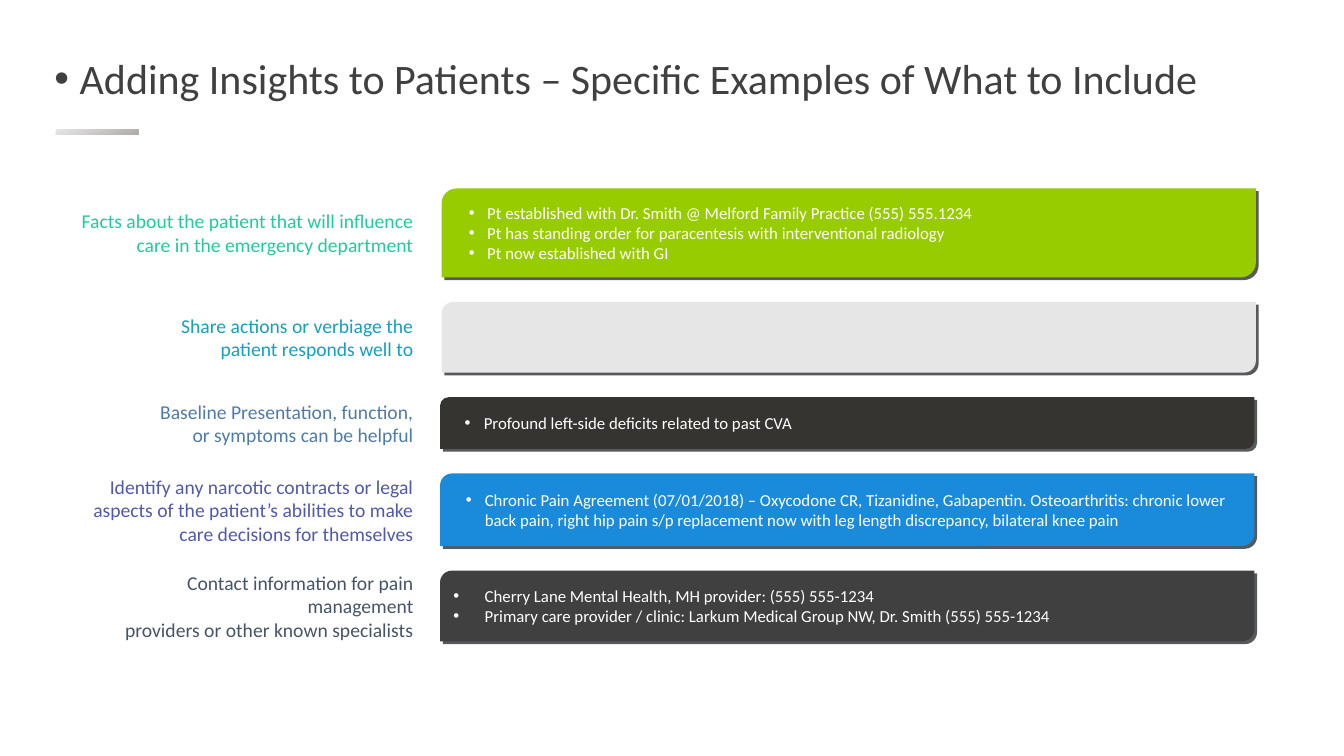
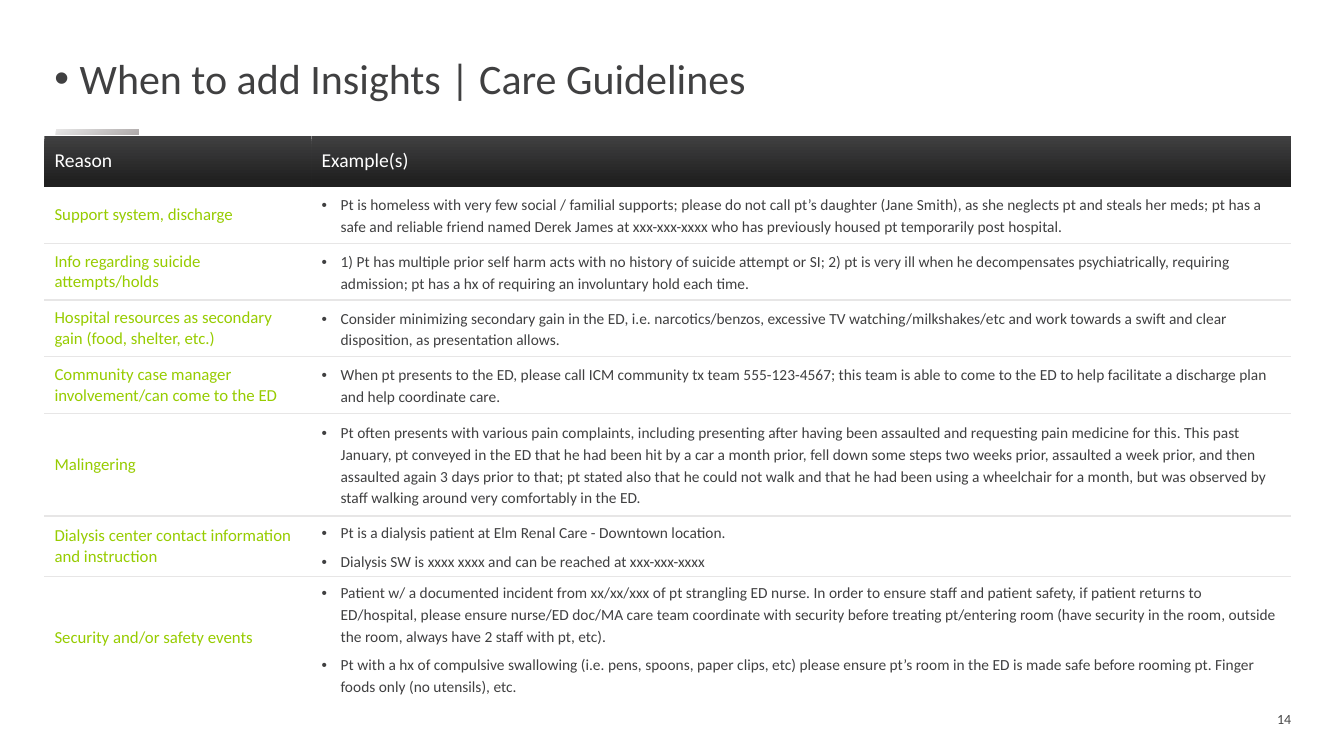
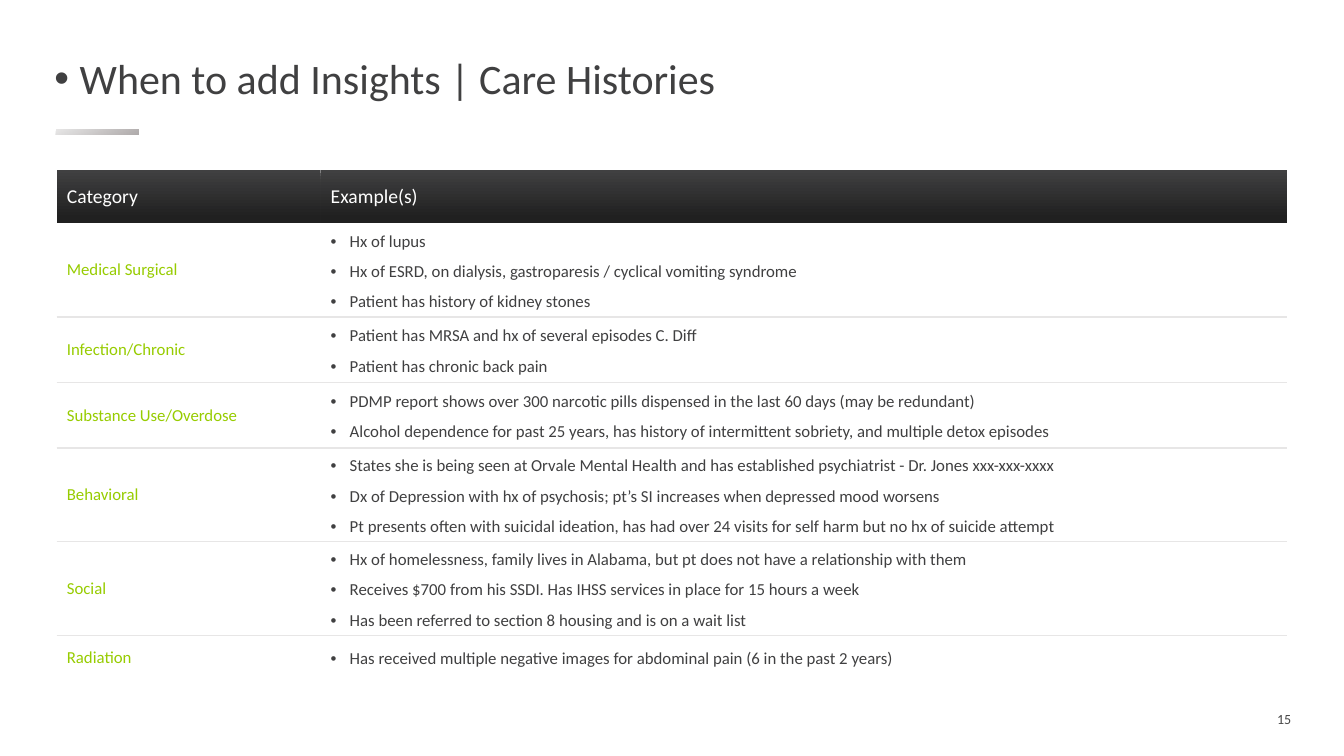
from itertools import accumulate

from lxml import etree
from pptx import Presentation
from pptx.dml.color import RGBColor
from pptx.enum import shapes, text
from pptx.oxml import ns
from pptx.util import Cm, Pt

FONT = "Calibri"
COLORS = {
    "white": "FFFFFF", "ink": "404041", "ink_dark": "202020", "number": "474747",
    "silver": "E7E6E6", "gray": "AFABAB", "shade": "58595B", "lime": "97CC00",
    "charcoal": "353431", "blue": "198BDA", "mint": "21CB9C", "teal": "14A0C0",
    "steel": "4F7BAC", "violet": "5059AB", "slate": "455469",
}
NO_GRID_STYLE = "{2D5ABB26-0587-4C30-8999-92F81FD0307C}"

# label lines, label colour, panel colour, panel left, panel height, bullet hang, bullets
INSIGHTS = [
    (["Facts about the patient that will influence", "care in the emergency department"],
     "mint", "lime", 11.13, 2.24, 0.46,
     ["Pt established with Dr. Smith @ Melford Family Practice (555) 555.1234",
      "Pt has standing order for paracentesis with interventional radiology",
      "Pt now established with GI"]),
    (["Share actions or verbiage the", "patient responds well to"],
     "teal", "silver", 11.13, 1.78, 0.48, []),
    (["Baseline Presentation, function,", "or symptoms can be helpful"],
     "steel", "charcoal", 11.09, 1.3, 0.48,
     ["Profound left-side deficits related to past CVA"]),
    (["Identify any narcotic contracts or legal", "aspects of the patient’s abilities to make",
      "care decisions for themselves"],
     "violet", "blue", 11.09, 1.83, 0.48,
     ["Chronic Pain Agreement (07/01/2018) – Oxycodone CR, Tizanidine, Gabapentin. "
      "Osteoarthritis: chronic lower back pain, right hip pain s/p replacement now with "
      "leg length discrepancy, bilateral knee pain"]),
    (["Contact information for pain management", "providers or other known specialists"],
     "slate", "ink", 11.09, 1.78, 0.79,
     ["Cherry Lane Mental Health, MH provider: (555) 555-1234",
      "Primary care provider / clinic: Larkum Medical Group NW, Dr. Smith (555) 555-1234"]),
]

# row label, row height, bullets
GUIDELINES = [
    ("Support system, discharge", 1.43,
     ["Pt is homeless with very few social / familial supports; please do not call pt’s "
      "daughter (Jane Smith), as she neglects pt and steals her meds; pt has a safe and "
      "reliable friend named Derek James at xxx-xxx-xxxx who has previously housed pt "
      "temporarily post hospital."]),
    ("Info regarding suicide attempts/holds", 1.43,
     ["1) Pt has multiple prior self harm acts with no history of suicide attempt or SI; "
      "2) pt is very ill when he decompensates psychiatrically, requiring admission; pt has "
      "a hx of requiring an involuntary hold each time."]),
    ("Hospital resources as secondary gain (food, shelter, etc.)", 1.43,
     ["Consider minimizing secondary gain in the ED, i.e. narcotics/benzos, excessive TV "
      "watching/milkshakes/etc and work towards a swift and clear disposition, as "
      "presentation allows."]),
    ("Community case manager involvement/can come to the ED", 1.43,
     ["When pt presents to the ED, please call ICM community tx team 555-123-4567; this team "
      "is able to come to the ED to help facilitate a discharge plan and help coordinate care."]),
    ("Malingering", 2.58,
     ["Pt often presents with various pain complaints, including presenting after having been "
      "assaulted and requesting pain medicine for this. This past January, pt conveyed in the "
      "ED that he had been hit by a car a month prior, fell down some steps two weeks prior, "
      "assaulted a week prior, and then assaulted again 3 days prior to that; pt stated also "
      "that he could not walk and that he had been using a wheelchair for a month, but was "
      "observed by staff walking around very comfortably in the ED."]),
    ("Dialysis center contact information and instruction", 1.52,
     ["Pt is a dialysis patient at Elm Renal Care - Downtown location.",
      "Dialysis SW is xxxx xxxx and can be reached at xxx-xxx-xxxx"]),
    ("Security and/or safety events", 3.12,
     ["Patient w/ a documented incident from xx/xx/xxx of pt strangling ED nurse. In order to "
      "ensure staff and patient safety, if patient returns to ED/hospital, please ensure "
      "nurse/ED doc/MA care team coordinate with security before treating pt/entering room "
      "(have security in the room, outside the room, always have 2 staff with pt, etc).",
      "Pt with a hx of compulsive swallowing (i.e. pens, spoons, paper clips, etc) please "
      "ensure pt’s room in the ED is made safe before rooming pt. Finger foods only "
      "(no utensils), etc."]),
]
HISTORIES = [
    ("Medical Surgical", 2.36,
     ["Hx of lupus",
      "Hx of ESRD, on dialysis, gastroparesis / cyclical vomiting syndrome",
      "Patient has history of kidney stones"]),
    ("Infection/Chronic", 1.65,
     ["Patient has MRSA and hx of several episodes C. Diff",
      "Patient has chronic back pain"]),
    ("Substance Use/Overdose", 1.65,
     ["PDMP report shows over 300 narcotic pills dispensed in the last 60 days (may be redundant)",
      "Alcohol dependence for past 25 years, has history of intermittent sobriety, and "
      "multiple detox episodes"]),
    ("Behavioral", 2.36,
     ["States she is being seen at Orvale Mental Health and has established psychiatrist - "
      "Dr. Jones xxx-xxx-xxxx",
      "Dx of Depression with hx of psychosis; pt’s SI increases when depressed mood worsens",
      "Pt presents often with suicidal ideation, has had over 24 visits for self harm but "
      "no hx of suicide attempt"]),
    ("Social", 2.36,
     ["Hx of homelessness, family lives in Alabama, but pt does not have a relationship with them",
      "Receives $700 from his SSDI. Has IHSS services in place for 15 hours a week",
      "Has been referred to section 8 housing and is on a wait list"]),
    ("Radiation", 1.12,
     ["Has received multiple negative images for abdominal pain (6 in the past 2 years)"]),
]


def rgb(color):
    return RGBColor.from_string(COLORS[color])


def add_span(para, words, size, color):
    span = para.add_run()
    span.text = words
    span.font.name = FONT
    span.font.size = Pt(size)
    span.font.color.rgb = rgb(color)


def set_bullet(para, indent, hang):
    props = para._p.get_or_add_pPr()
    props.set("marL", str(Cm(indent)))
    props.set("indent", str(-Cm(hang)))
    etree.SubElement(props, ns.qn("a:buFont")).set("typeface", "Arial")
    etree.SubElement(props, ns.qn("a:buChar")).set("char", "•")


def add_bullets(frame, lines, size, color, indent, hang, spacing=None, after=None):
    for index, line in enumerate(lines):
        para = frame.add_paragraph() if index else frame.paragraphs[0]
        para.alignment = text.PP_ALIGN.LEFT
        if spacing:
            para.line_spacing = spacing
        if after:
            para.space_after = Pt(after)
        set_bullet(para, indent, hang)
        add_span(para, line, size, color)


def add_text_frame(page, left, top, width, height):
    box = page.shapes.add_textbox(Cm(left), Cm(top), Cm(width), Cm(height))
    frame = box.text_frame
    frame.word_wrap = True
    frame.vertical_anchor = text.MSO_ANCHOR.MIDDLE
    return frame


def add_plain_shape(page, preset, left, top, width, height):
    shape = page.shapes.add_shape(preset, Cm(left), Cm(top), Cm(width), Cm(height))
    shape.shadow.inherit = False
    shape.line.fill.background()
    return shape


def fill_gradient(fill, start, end, angle, end_position=1.0):
    fill.gradient()
    fill.gradient_angle = angle
    first, last = fill.gradient_stops
    first.color.rgb, last.color.rgb = rgb(start), rgb(end)
    last.position = end_position


def add_page(deck, title, number=None):
    """Adds a page with the shared title, accent bar and optional page number."""
    page = deck.slides.add_slide(deck.slide_layouts[6])
    accent = add_plain_shape(page, shapes.MSO_SHAPE.RECTANGLE, 1.4, 3.26, 2.1, 0.14)
    fill_gradient(accent.fill, "silver", "gray", 300)
    frame = add_text_frame(page, 1.12, 1.3, 31.65, 1.47)
    frame.margin_top = frame.margin_bottom = 0
    frame.paragraphs[0].space_before = Pt(10)
    add_bullets(frame, [title], 30, "ink", 0.64, 0.64, spacing=0.9)
    if number:
        para = add_text_frame(page, 23.93, 17.91, 8.86, 0.41).paragraphs[0]
        para.alignment = text.PP_ALIGN.RIGHT
        add_span(para, number, 10, "number")
    return page


def add_label(page, lines, color, top, height):
    para = add_text_frame(page, 1.73, top, 8.94, height).paragraphs[0]
    para.alignment = text.PP_ALIGN.RIGHT
    for index, line in enumerate(lines):
        if index:
            para.add_line_break()
        add_span(para, line, 14, color)


def add_panel(page, color, left, top, height, hang, lines):
    """Adds a panel on top of its offset shade."""
    for offset, fill in ((0.07, "shade"), (0, color)):
        panel = add_plain_shape(page, shapes.MSO_SHAPE.ROUND_2_DIAG_RECTANGLE,
                                left + offset, top + offset, 20.52, height)
        panel.fill.solid()
        panel.fill.fore_color.rgb = rgb(fill)
    panel.text_frame.vertical_anchor = text.MSO_ANCHOR.MIDDLE
    add_bullets(panel.text_frame, lines, 12, "white", 0.79, hang)


def add_bottom_border(cell, color):
    line = etree.Element(ns.qn("a:lnB"), w=str(Pt(1)))
    fill = etree.SubElement(line, ns.qn("a:solidFill"))
    etree.SubElement(fill, ns.qn("a:srgbClr")).set("val", COLORS[color])
    cell._tc.get_or_add_tcPr().insert(0, line)


def add_example_table(page, left, top, widths, header, header_height, rows, size):
    heights = [header_height] + [height for _, height, _ in rows]
    frame = page.shapes.add_table(len(heights), 2, Cm(left), Cm(top),
                                  Cm(sum(widths)), Cm(sum(heights)))
    table = frame.table
    table._tbl.tblPr.find(ns.qn("a:tableStyleId")).text = NO_GRID_STYLE
    table.horz_banding = False
    for column, width in zip(table.columns, widths):
        column.width = Cm(width)
    for row, height in zip(table.rows, heights):
        row.height = Cm(height)
    for cell in table.iter_cells():
        cell.vertical_anchor = text.MSO_ANCHOR.MIDDLE
        cell.fill.background()

    for column, words in enumerate((header, "Example(s)")):
        cell = table.cell(0, column)
        fill_gradient(cell.fill, "ink", "ink_dark", 270, 0.9)
        add_span(cell.text_frame.paragraphs[0], words, 14, "white")
    for index, (label, _, examples) in enumerate(rows, 1):
        label_cell, example_cell = table.cell(index, 0), table.cell(index, 1)
        add_span(label_cell.text_frame.paragraphs[0], label, 12, "lime")
        add_bullets(example_cell.text_frame, examples, size, "ink", 0.48, 0.48, 1.14, 5)
        if index < len(rows):
            add_bottom_border(label_cell, "silver")
            add_bottom_border(example_cell, "silver")


def add_insights(page):
    gap = 0.62
    tops = accumulate((row[4] + gap for row in INSIGHTS), initial=4.75)
    for top, (label, label_color, color, left, height, hang, lines) in zip(tops, INSIGHTS):
        add_label(page, label, label_color, top, height)
        add_panel(page, color, left, top, height, hang, lines)


def main():
    deck = Presentation()
    deck.slide_width, deck.slide_height = Cm(33.87), Cm(19.05)
    add_insights(add_page(
        deck, "Adding Insights to Patients – Specific Examples of What to Include"))
    add_example_table(add_page(deck, "When to add Insights | Care Guidelines", "14"),
                      1.12, 3.42, (6.73, 24.69), "Reason", 1.28, GUIDELINES, 11)
    add_example_table(add_page(deck, "When to add Insights | Care Histories", "15"),
                      1.43, 4.28, (6.65, 24.36), "Category", 1.35, HISTORIES, 12)
    deck.save("out.pptx")


if __name__ == "__main__":
    main()
